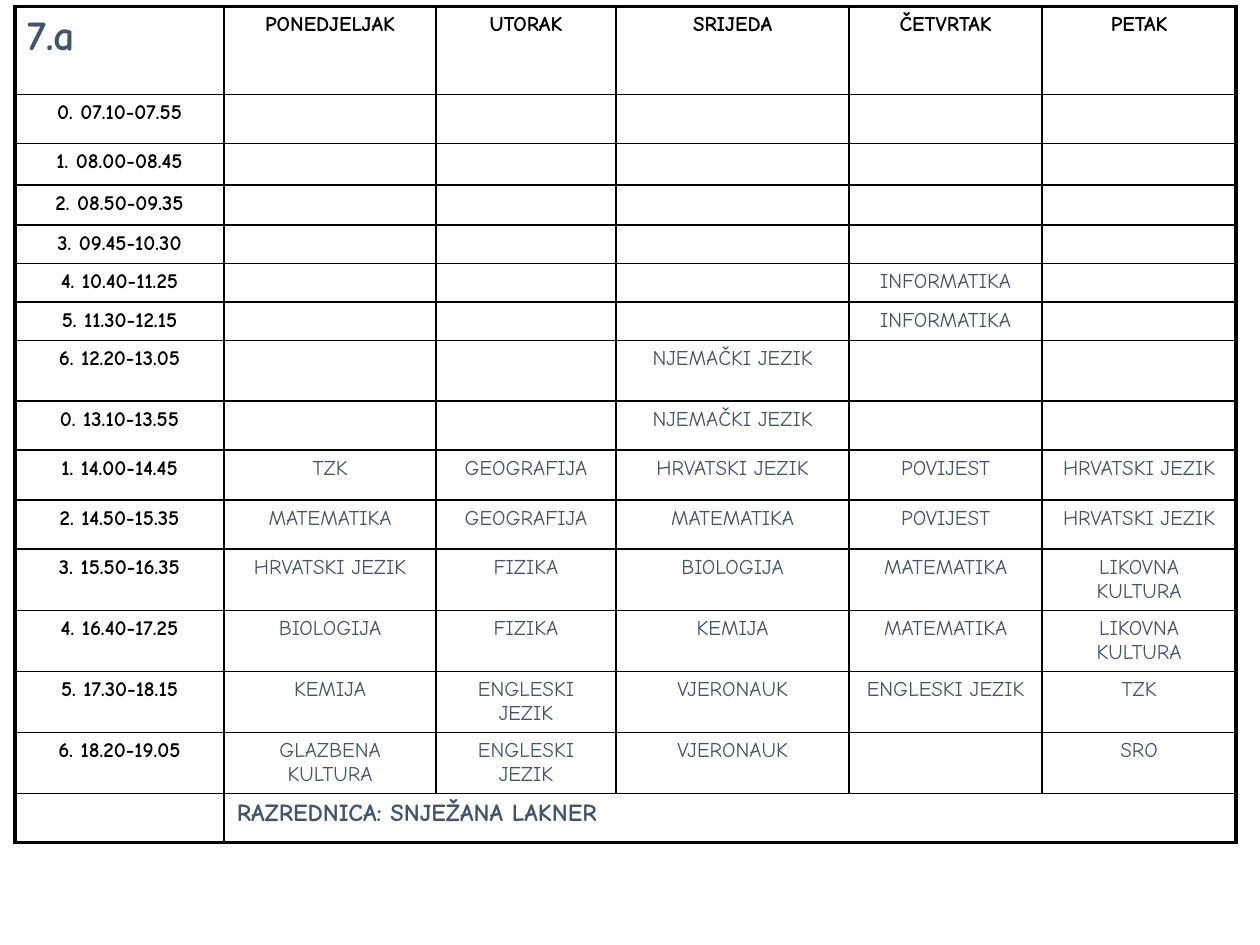
from pptx import Presentation
from pptx.dml.color import RGBColor as RGB
from pptx.enum.text import MSO_ANCHOR as ANCHOR, PP_ALIGN as ALIGN
from pptx.oxml import parse_xml
from pptx.oxml.ns import nsdecls
from pptx.util import Cm, Pt

COLORS = {"ink": "000000", "subject": "44546A"}
FONT = "Comic Neue"
THIN, THICK = 1, 2.25
COLS = [4.22, 4.27, 3.63, 4.7, 3.89, 3.91]
ROWS = [1.78, 0.98, 0.84, 0.81, 0.75, 0.78, 0.75, 1.22, 0.99, 1.01, 0.99,
        1.23, 1.23, 1.23, 1.23, 0.99]
TIMETABLE = [
    ["7.a", "PONEDJELJAK", "UTORAK", "SRIJEDA", "ČETVRTAK", "PETAK"],
    ["0. 07.10-07.55", "", "", "", "", ""],
    ["1. 08.00-08.45", "", "", "", "", ""],
    ["2. 08.50-09.35", "", "", "", "", ""],
    ["3. 09.45-10.30", "", "", "", "", ""],
    ["4. 10.40-11.25", "", "", "", "INFORMATIKA", ""],
    ["5. 11.30-12.15", "", "", "", "INFORMATIKA", ""],
    ["6. 12.20-13.05", "", "", "NJEMAČKI JEZIK", "", ""],
    ["0. 13.10-13.55", "", "", "NJEMAČKI JEZIK", "", ""],
    ["1. 14.00-14.45", "TZK", "GEOGRAFIJA", "HRVATSKI JEZIK", "POVIJEST",
     "HRVATSKI JEZIK"],
    ["2. 14.50-15.35", "MATEMATIKA", "GEOGRAFIJA", "MATEMATIKA", "POVIJEST",
     "HRVATSKI JEZIK"],
    ["3. 15.50-16.35", "HRVATSKI JEZIK", "FIZIKA", "BIOLOGIJA", "MATEMATIKA",
     "LIKOVNA KULTURA"],
    ["4. 16.40-17.25", "BIOLOGIJA", "FIZIKA", "KEMIJA", "MATEMATIKA",
     "LIKOVNA KULTURA"],
    ["5. 17.30-18.15", "KEMIJA", "ENGLESKI JEZIK", "VJERONAUK",
     "ENGLESKI JEZIK", "TZK"],
    ["6. 18.20-19.05", "GLAZBENA KULTURA", "ENGLESKI JEZIK", "VJERONAUK", "",
     "SRO"],
    ["", "RAZREDNICA: SNJEŽANA LAKNER", "", "", "", ""],
]


def set_borders(cell, **widths):
    """Draw the given sides (L, R, T, B) of a cell, widths in points."""
    tcPr = cell._tc.get_or_add_tcPr()
    for side, width in widths.items():
        tcPr.append(parse_xml(
            f'<a:ln{side} {nsdecls("a")} w="{Pt(width)}"><a:solidFill>'
            f'<a:srgbClr val="{COLORS["ink"]}"/></a:solidFill></a:ln{side}>'))


def write_cell(cell, text, size=12, color="subject", bold=False,
               align=ALIGN.CENTER):
    """Write one formatted run, or keep an empty line at the same size."""
    cell.vertical_anchor = ANCHOR.TOP
    p = cell.text_frame.paragraphs[0]
    p.alignment = align
    if not text:
        p._p.get_or_add_endParaRPr().set("sz", str(size * 100))
        return
    r = p.add_run()
    r.text = text
    r.font.name, r.font.size, r.font.bold = FONT, Pt(size), bold
    r.font.color.rgb = RGB.from_string(COLORS[color])


def text_style(row, col):
    """Return the text format that belongs to a place in the timetable."""
    if (row, col) == (0, 0):
        return {"size": 24, "bold": True, "align": ALIGN.LEFT}
    if row == len(ROWS) - 1 and col:
        return {"size": 14, "bold": True, "align": ALIGN.LEFT}
    if row == 0 or col == 0:
        return {"color": "ink", "bold": True}
    return {}


def add_timetable(slide, left, top):
    """Add the weekly timetable with its top left corner at the given point."""
    last_row, last_col = len(ROWS) - 1, len(COLS) - 1
    table = slide.shapes.add_table(len(ROWS), len(COLS), left, top,
                                   Cm(sum(COLS)), Cm(sum(ROWS))).table
    table.first_row = table.horz_banding = False
    for column, width in zip(table.columns, COLS):
        column.width = Cm(width)
    for row, height in zip(table.rows, ROWS):
        row.height = Cm(height)
    table.cell(last_row, 1).merge(table.cell(last_row, last_col))

    for i, texts in enumerate(TIMETABLE):
        for j, text in enumerate(texts):
            cell = table.cell(i, j)
            if cell.is_spanned:
                continue
            end = j + cell.span_width - 1
            set_borders(cell,
                        L=THICK if j == 0 else THIN,
                        R=THICK if end == last_col else THIN,
                        T=THICK if i == 0 else THIN,
                        B=THICK if i == last_row else THIN)
            cell.fill.background()
            write_cell(cell, text, **text_style(i, j))


def main():
    """Build the timetable slide and save it."""
    prs = Presentation()
    prs.slide_width, prs.slide_height = Cm(25.4), Cm(19.05)
    slide = prs.slides.add_slide(prs.slide_layouts[6])
    add_timetable(slide, Cm(0.3), Cm(0.13))
    prs.save("out.pptx")


if __name__ == "__main__":
    main()
